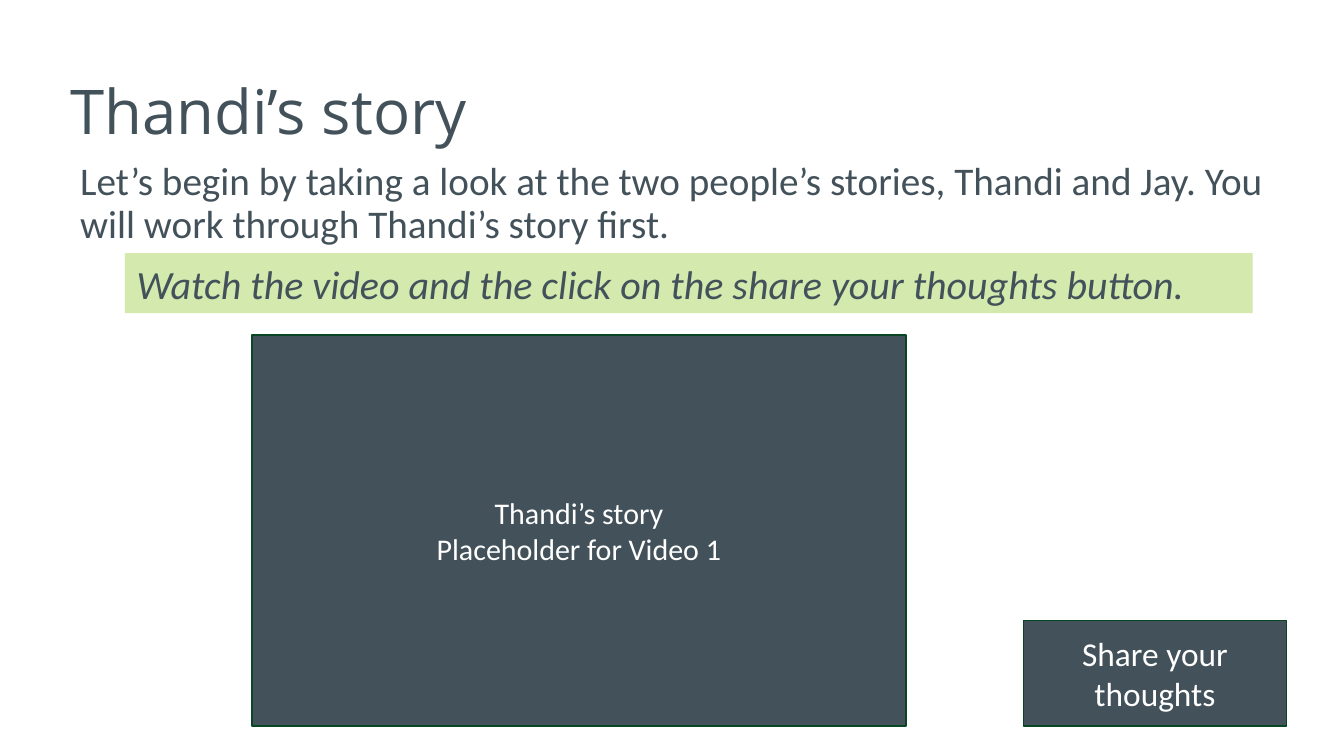
from pptx import Presentation
from pptx import util as u
from pptx.dml.color import RGBColor
from pptx.enum import shapes, text

WIDTH, HEIGHT = 11.2, 6.3
SLATE, GREEN, LIME, WHITE = "43525A", "094724", "D3E9AD", "FFFFFF"
BASELINE = 6.05
RIGHT_EDGE = 10.72

TITLE = "Thandi’s story"
INTRO = ("Let’s begin by taking a look at the two people’s stories, Thandi and Jay. "
         "You will work through Thandi’s story first.")
INSTRUCTION = "Watch the video and the click on the share your thoughts button."
PANELS = [
    (["Share your thoughts"], 20, RIGHT_EDGE - 2.19, 2.19, 0.88),
    (["Thandi’s story", "Placeholder for Video 1"], 18, 2.1, 5.45, 3.26),
]


def colour(value):
    return RGBColor.from_string(value)


def inches(*lengths):
    return [u.Inches(length) for length in lengths]


def write(frame, lines, size, ink, font="Calibri", align=text.PP_ALIGN.LEFT,
          anchor=text.MSO_ANCHOR.TOP, italic=False, spacing=1.0):
    frame.word_wrap = True
    frame.auto_size = text.MSO_AUTO_SIZE.NONE
    frame.vertical_anchor = anchor
    frame.text = "\n".join(lines)
    for paragraph in frame.paragraphs:
        paragraph.alignment = align
        paragraph.line_spacing = spacing
        paragraph.font.name = font
        paragraph.font.size = u.Pt(size)
        paragraph.font.italic = italic
        paragraph.font.color.rgb = colour(ink)


def add_block(slide, box, fill, outline=None):
    block = slide.shapes.add_shape(shapes.MSO_SHAPE.RECTANGLE, *inches(*box))
    block.shadow.inherit = False
    block.fill.solid()
    block.fill.fore_color.rgb = colour(fill)
    if outline:
        block.line.color.rgb = colour(outline)
        block.line.width = u.Pt(1)
    else:
        block.line.fill.background()
    return block.text_frame


def main():
    deck = Presentation()
    deck.slide_width, deck.slide_height = inches(WIDTH, HEIGHT)
    slide = deck.slides.add_slide(deck.slide_layouts.get_by_name("Title Only"))

    title = slide.shapes.title
    title.left, title.top, title.width, title.height = inches(0.49, 0.34, 9.66, 1.22)
    write(title.text_frame, [TITLE], 37, SLATE, font="Open Sans",
          anchor=text.MSO_ANCHOR.MIDDLE, spacing=0.9)

    instruction = add_block(slide, (1.04, 2.11, 9.4, 0.5), LIME)
    write(instruction, [INSTRUCTION], 24, SLATE, italic=True)

    for lines, size, left, width, height in PANELS:
        panel = add_block(slide, (left, BASELINE - height, width, height), SLATE, GREEN)
        write(panel, lines, size, WHITE, align=text.PP_ALIGN.CENTER,
              anchor=text.MSO_ANCHOR.MIDDLE)

    intro = slide.shapes.add_textbox(*inches(0.57, 1.3, RIGHT_EDGE - 0.57, 1.03))
    write(intro.text_frame, [INTRO], 23.5, SLATE, spacing=0.9)

    deck.save("out.pptx")


if __name__ == "__main__":
    main()
